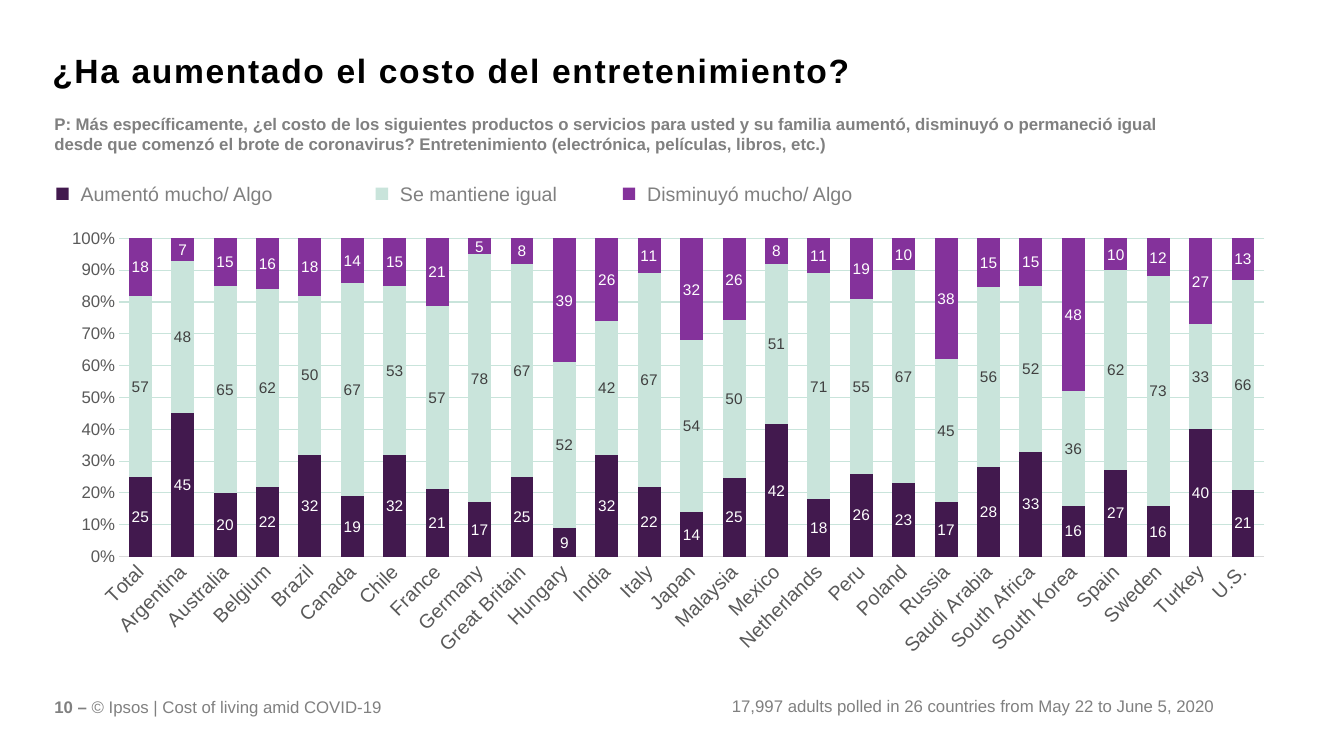
"""Build the slide on how the cost of entertainment changed, by country."""
from lxml import etree
from pptx import Presentation, util as u
from pptx.chart import data as chart_data
from pptx.dml.color import RGBColor
from pptx.enum import chart as ch, shapes, text
from pptx.oxml import parse_xml

BLACK = RGBColor(0x00, 0x00, 0x00)
WHITE = RGBColor(0xFF, 0xFF, 0xFF)
GREY = RGBColor(0x80, 0x80, 0x80)
AXIS_GREY = RGBColor(0x59, 0x59, 0x59)
LABEL_GREY = RGBColor(0x40, 0x40, 0x40)
LINE_GREY = RGBColor(0xD9, 0xD9, 0xD9)
PLUM = RGBColor(0x42, 0x19, 0x4E)
MINT = RGBColor(0xC9, 0xE4, 0xDB)
VIOLET = RGBColor(0x84, 0x32, 0x9B)

MARGIN = 1.12
COUNTRIES = [
    "Total", "Argentina", "Australia", "Belgium", "Brazil", "Canada", "Chile",
    "France", "Germany", "Great Britain", "Hungary", "India", "Italy", "Japan",
    "Malaysia", "Mexico", "Netherlands", "Peru", "Poland", "Russia",
    "Saudi Arabia", "South Africa", "South Korea", "Spain", "Sweden", "Turkey",
    "U.S.",
]
ANSWERS = [
    ("Aumentó mucho/ Algo", PLUM, WHITE, 1.42, 6.4,
     [25, 45, 20, 22, 32, 19, 32, 21, 17, 25, 9, 32, 22, 14, 25, 42, 18, 26,
      23, 17, 28, 33, 16, 27, 16, 40, 21]),
    ("Se mantiene igual", MINT, LABEL_GREY, 9.47, 5,
     [57, 48, 65, 62, 50, 67, 53, 57, 78, 67, 52, 42, 67, 54, 50, 51, 71, 55,
      67, 45, 56, 52, 36, 62, 73, 33, 66]),
    ("Disminuyó mucho/ Algo", VIOLET, WHITE, 15.7, 6.7,
     [18, 7, 15, 16, 18, 14, 15, 21, 5, 8, 39, 26, 11, 32, 26, 8, 11, 19, 10,
      38, 15, 15, 48, 10, 12, 27, 13]),
]


def set_font(font, size, color, bold=False):
    font.name = "Arial"
    font.size = u.Pt(size)
    font.bold = bold
    font.color.rgb = color


def add_text(left, top, width, height, wording, size, color=GREY, bold=False):
    box = slide.shapes.add_textbox(u.Cm(left), u.Cm(top), u.Cm(width), u.Cm(height))
    box.text_frame.word_wrap = True
    paragraph = box.text_frame.paragraphs[0]
    paragraph.add_run().text = wording
    set_font(paragraph.font, size, color, bold)
    return paragraph


prs = Presentation()
prs.slide_width = u.Cm(33.87)
prs.slide_height = u.Cm(19.05)
slide = prs.slides.add_slide(prs.slide_layouts[6])

poll = chart_data.CategoryChartData(number_format="0")
poll.categories = COUNTRIES
for answer, _, _, _, _, shares in ANSWERS:
    poll.add_series(answer, shares)
chart = slide.shapes.add_chart(
    ch.XL_CHART_TYPE.COLUMN_STACKED_100,
    u.Cm(MARGIN), u.Cm(5.56), u.Cm(31.37), u.Cm(11.2), poll).chart
chart.has_legend = False
chart.has_title = False
set_font(chart.font, 10, BLACK)

columns = chart.plots[0]
columns.gap_width = 85
columns.overlap = 100
columns.vary_by_categories = False
for series, (_, color, label_color, _, _, _) in zip(columns.series, ANSWERS):
    series.format.fill.solid()
    series.format.fill.fore_color.rgb = color
    labels = series.data_labels
    labels.show_value = True
    labels.number_format = "0"
    labels.number_format_is_linked = False
    set_font(labels.font, 11, label_color)

countries_axis = chart.category_axis
countries_axis.major_tick_mark = ch.XL_TICK_MARK.NONE
countries_axis.format.line.color.rgb = LINE_GREY
countries_axis.format.line.width = u.Pt(0.75)
set_font(countries_axis.tick_labels.font, 14, AXIS_GREY)
label_body = countries_axis._element.xpath("c:txPr/a:bodyPr")[0]
label_body.set("rot", "-2700000")
label_body.set("vert", "horz")

share_axis = chart.value_axis
share_axis.minimum_scale = 0
share_axis.maximum_scale = 1
share_axis.major_unit = 0.1
share_axis.major_tick_mark = ch.XL_TICK_MARK.NONE
share_axis.format.line.fill.background()
share_axis.major_gridlines.format.line.color.rgb = MINT
share_axis.major_gridlines.format.line.width = u.Pt(0.75)
share_axis.tick_labels.number_format = "0%"
share_axis.tick_labels.number_format_is_linked = False
set_font(share_axis.tick_labels.font, 12, AXIS_GREY)

plot_area = chart._chartSpace.xpath("c:chart/c:plotArea")[0]
for old_layout in plot_area.xpath("c:layout"):
    plot_area.remove(old_layout)
layout = parse_xml(
    '<c:layout xmlns:c="http://schemas.openxmlformats.org/drawingml/2006/chart">'
    '<c:manualLayout><c:layoutTarget val="inner"/>'
    '<c:xMode val="edge"/><c:yMode val="edge"/>'
    '<c:x val="0.06"/><c:y val="0.04"/><c:w val="0.92"/><c:h val="0.716"/>'
    '</c:manualLayout></c:layout>')
plot_area.insert(0, layout)

title = add_text(MARGIN, 1.02, 31.37, 1.3,
                 "¿Ha aumentado el costo del entretenimiento?", 24, BLACK, True)
title.line_spacing = 1.1
title.space_after = u.Pt(6)
title.runs[0].font._element.set("spc", "120")
title_frame = slide.shapes[-1].text_frame
title_frame.margin_left = title_frame.margin_right = u.Cm(0.2)

add_text(MARGIN, 2.74, 29.18, 1.27,
         "P: Más específicamente, ¿el costo de los siguientes productos o servicios "
         "para usted y su familia aumentó, disminuyó o permaneció igual desde que "
         "comenzó el brote de coronavirus? Entretenimiento (electrónica, películas, "
         "libros, etc.)", 12, bold=True)

for answer, color, _, left, width, _ in ANSWERS:
    key = slide.shapes.add_shape(
        shapes.MSO_SHAPE.RECTANGLE, u.Cm(left), u.Cm(4.73), u.Cm(0.31), u.Cm(0.31))
    key.shadow.inherit = False
    key.fill.solid()
    key.fill.fore_color.rgb = color
    key.line.fill.background()
    add_text(left + 0.36, 4.45, width, 0.86, answer, 14)

sample = add_text(17.4, 17.4, 13.46, 0.76,
                  "17,997 adults polled in 26 countries from May 22 to June 5, 2020", 12)
sample.alignment = text.PP_ALIGN.RIGHT

footer = add_text(MARGIN, 17.42, 9.6, 0.64, "10 – ", 12)
footer.runs[0].font.bold = True
footer.add_run().text = "© Ipsos | Cost of living amid COVID-19"

prs.save("out.pptx")
